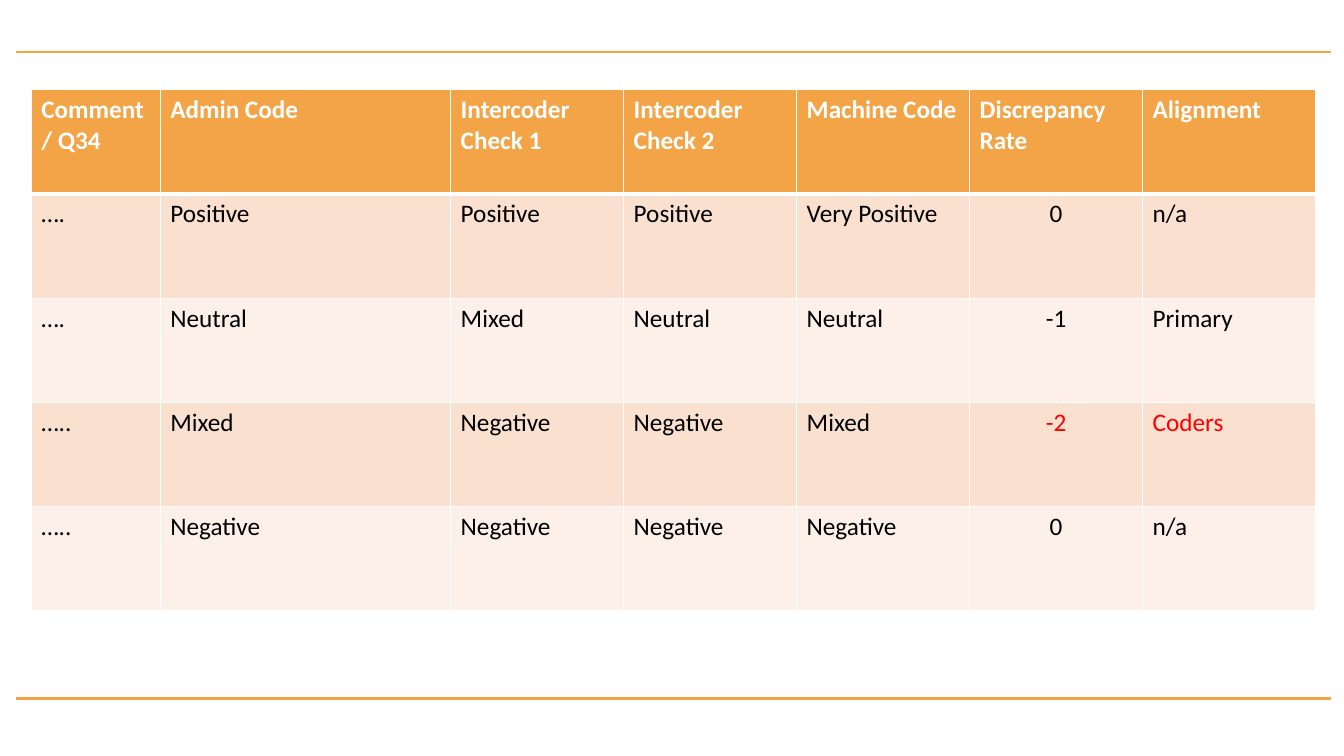
"""Build a slide with a coding comparison table between two rules."""
import lxml.etree
import pptx
import pptx.dml.color
import pptx.enum.shapes
import pptx.enum.text
import pptx.oxml.ns
import pptx.util

HEADER = ["Comment / Q34", "Admin Code", "Intercoder Check 1", "Intercoder Check 2",
          "Machine Code", "Discrepancy Rate", "Alignment"]
ROWS = [
    ["….", "Positive", "Positive", "Positive", "Very Positive", "0", "n/a"],
    ["….", "Neutral", "Mixed", "Neutral", "Neutral", "-1", "Primary"],
    ["…..", "Mixed", "Negative", "Negative", "Mixed", "-2", "Coders"],
    ["…..", "Negative", "Negative", "Negative", "Negative", "0", "n/a"],
]
ALERTS = {"-2", "Coders"}
RATE_COL = HEADER.index("Discrepancy Rate")
COLORS = {"accent": "F3A447", "dark_band": "FAE0CF", "light_band": "FDF0E9",
          "white": "FFFFFF", "text": "000000", "alert": "FF0000"}
FONT, SIZE = "Calibri", 18
SLIDE_W, SLIDE_H = 13.33, 7.5
RULE_LEFT, RULE_RIGHT, RULE_TOPS = 0.16, 13.2, (0.52, 6.93)
LEFT, TOP, WIDTH, HEIGHT = 0.31, 0.89, 12.74, 5.17
FIRST_COLS = [1.28, 2.88]


def inches(*values):
    return [pptx.util.Inches(v) for v in values]


def rgb(name):
    return pptx.dml.color.RGBColor.from_string(COLORS[name])


def add_rule(slide, y):
    line = slide.shapes.add_connector(pptx.enum.shapes.MSO_CONNECTOR.STRAIGHT,
                                      *inches(RULE_LEFT, y, RULE_RIGHT, y))
    line.line.color.rgb = rgb("accent")
    line.line.width = pptx.util.Pt(1.5)
    sp_pr = line._element.spPr
    lxml.etree.SubElement(sp_pr, pptx.oxml.ns.qn("a:effectLst"))


def set_borders(cell, row):
    tc_pr = cell._tc.get_or_add_tcPr()
    widths = {"L": 1, "R": 1, "T": 3 if row == 1 else 1, "B": 3 if row == 0 else 1}
    for i, (side, width) in enumerate(widths.items()):
        ln = lxml.etree.Element(pptx.oxml.ns.qn(f"a:ln{side}"), w=str(pptx.util.Pt(width)))
        fill = lxml.etree.SubElement(ln, pptx.oxml.ns.qn("a:solidFill"))
        lxml.etree.SubElement(fill, pptx.oxml.ns.qn("a:srgbClr"), val=COLORS["white"])
        tc_pr.insert(i, ln)


def fill_cell(cell, text, row, col):
    header = row == 0
    cell.text = text
    cell.fill.solid()
    band = "dark_band" if row % 2 else "light_band"
    cell.fill.fore_color.rgb = rgb("accent" if header else band)
    p = cell.text_frame.paragraphs[0]
    p.font.name, p.font.size, p.font.bold = FONT, pptx.util.Pt(SIZE), header
    p.font.color.rgb = rgb("white" if header else "alert" if text in ALERTS else "text")
    if col == RATE_COL and not header:
        p.alignment = pptx.enum.text.PP_ALIGN.CENTER
    set_borders(cell, row)


def add_code_table(slide):
    rows = [HEADER] + ROWS
    table = slide.shapes.add_table(len(rows), len(HEADER),
                                   *inches(LEFT, TOP, WIDTH, HEIGHT)).table
    equal_cols = len(HEADER) - len(FIRST_COLS)
    widths = FIRST_COLS + [(WIDTH - sum(FIRST_COLS)) / equal_cols] * equal_cols
    for column, width in zip(table.columns, widths):
        column.width = pptx.util.Inches(width)
    for r, texts in enumerate(rows):
        table.rows[r].height = pptx.util.Inches(HEIGHT / len(rows))
        for c, text in enumerate(texts):
            fill_cell(table.cell(r, c), text, r, c)


def main():
    prs = pptx.Presentation()
    prs.slide_width, prs.slide_height = inches(SLIDE_W, SLIDE_H)
    slide = prs.slides.add_slide(prs.slide_layouts[6])
    for y in RULE_TOPS:
        add_rule(slide, y)
    add_code_table(slide)
    prs.save("out.pptx")


if __name__ == "__main__":
    main()
